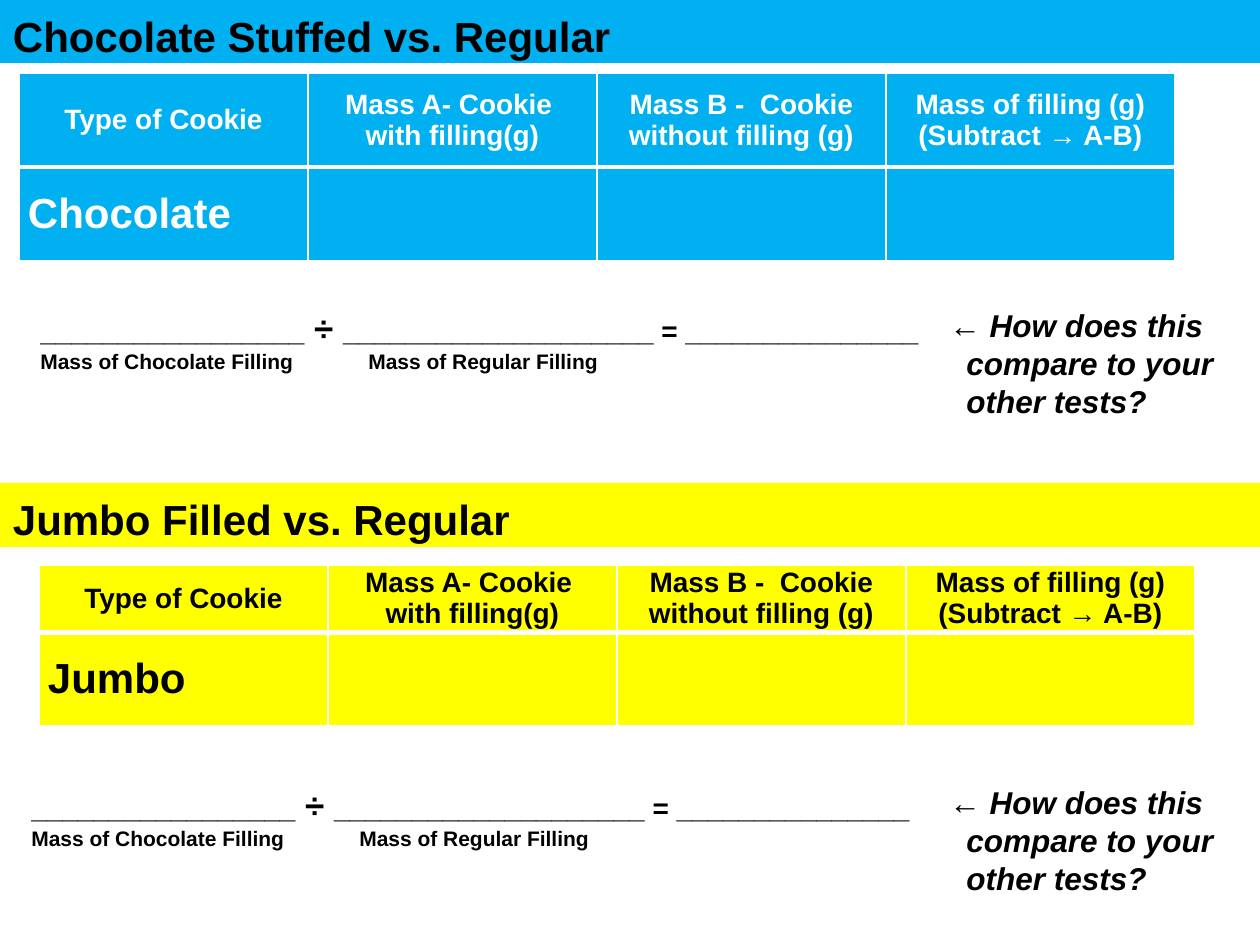
"""Build a cookie filling worksheet slide with two test sections."""
import dataclasses
import typing

import pptx
import pptx.dml.color
import pptx.enum.shapes
import pptx.enum.text
import pptx.oxml
import pptx.oxml.ns
import pptx.util

Align = pptx.enum.text.PP_ALIGN
Anchor = pptx.enum.text.MSO_ANCHOR
SCALE = 914400 / 126


@dataclasses.dataclass(frozen=True)
class Theme:
    font: str = "Arial"
    black: str = "000000"
    white: str = "FFFFFF"
    blue: str = "00B0F0"
    yellow: str = "FFFF00"
    large: int = 24
    sign: int = 20
    hint: int = 18
    body: int = 16
    label: int = 12


class Box(typing.NamedTuple):
    left: int
    top: int
    width: int
    height: int


@dataclasses.dataclass(frozen=True)
class Part:
    title: str
    kind: str
    fill: str
    ink: str
    banner: Box
    grid: Box
    rows: tuple[int, int]
    sum: Box
    hint: Box


THEME = Theme()
HEADS = ("Type of Cookie", "Mass A- Cookie \nwith filling(g)",
         "Mass B -  Cookie without filling (g)",
         "Mass of filling (g)\n(Subtract → A-B)")
PARTS = (
    Part("Chocolate Stuffed vs. Regular", "Chocolate", THEME.blue, THEME.white,
         Box(0, -1, 1260, 64), Box(19, 73, 1156, 188), (94, 94),
         Box(28, 300, 1258, 81), Box(937, 300, 323, 127)),
    Part("Jumbo Filled vs. Regular", "Jumbo", THEME.yellow, THEME.black,
         Box(0, 483, 1260, 64), Box(39, 565, 1156, 161), (67, 94),
         Box(19, 777, 1258, 81), Box(937, 777, 323, 127)),
)


def emu(px: int) -> int:
    return round(px * SCALE)


def place(box: Box) -> list[int]:
    return [emu(px) for px in box]


def color(code: str) -> pptx.dml.color.RGBColor:
    return pptx.dml.color.RGBColor.from_string(code)


def write(para, text: str, size: int, ink: str = THEME.black,
          slant: bool = False) -> None:
    for i, line in enumerate(text.split("\n")):
        if i:
            para.add_line_break()
        run = para.add_run()
        run.text = line
        font = run.font
        font.name, font.size = THEME.font, pptx.util.Pt(size)
        font.bold, font.italic = True, slant
        font.color.rgb = color(ink)


def draw_banner(shape, part: Part) -> None:
    shape.left, shape.top, shape.width, shape.height = place(part.banner)
    shape.shadow.inherit = False
    shape.fill.solid()
    shape.fill.fore_color.rgb = color(part.fill)
    shape.line.fill.background()
    frame = shape.text_frame
    frame.word_wrap = True
    frame.auto_size = pptx.enum.text.MSO_AUTO_SIZE.NONE
    frame.vertical_anchor = Anchor.TOP
    frame.margin_left = frame.margin_right = emu(13)
    frame.margin_top, frame.margin_bottom = emu(11), emu(2)
    para = frame.paragraphs[0]
    para.alignment = Align.LEFT
    write(para, part.title, THEME.large)


def edge(cell, side: str, points: int) -> None:
    space = pptx.oxml.ns.nsdecls("a")
    line = pptx.oxml.parse_xml(
        f'<a:ln{side} {space} w="{pptx.util.Pt(points)}"><a:solidFill>'
        f'<a:srgbClr val="{THEME.white}"/></a:solidFill></a:ln{side}>')
    cell._tc.get_or_add_tcPr().append(line)


def draw_grid(slide, part: Part) -> None:
    table = slide.shapes.add_table(2, len(HEADS), *place(part.grid)).table
    table.horz_banding = False
    for col in table.columns:
        col.width = emu(part.grid.width // len(HEADS))
    for y, height in enumerate(part.rows):
        table.rows[y].height = emu(height)
        for x, head in enumerate(HEADS):
            cell = table.cell(y, x)
            cell.vertical_anchor = Anchor.MIDDLE
            cell.margin_left = cell.margin_right = emu(9)
            cell.margin_top = cell.margin_bottom = 0
            for side, points in zip("LRTB", (1, 1, 3 if y else 1, 1 if y else 3)):
                edge(cell, side, points)
            cell.fill.solid()
            cell.fill.fore_color.rgb = color(part.fill)
            para = cell.text_frame.paragraphs[0]
            if y == 0:
                para.alignment = Align.CENTER
                write(para, head, THEME.body, part.ink)
            elif x == 0:
                write(para, part.kind, THEME.large, part.ink)


def add_frame(slide, box: Box):
    frame = slide.shapes.add_textbox(*place(box)).text_frame
    frame.word_wrap = True
    return frame


def draw_sum(slide, box: Box) -> None:
    frame = add_frame(slide, box)
    para = frame.paragraphs[0]
    write(para, "_" * 17, THEME.body)
    write(para, " ÷ ", THEME.sign)
    write(para, "_" * 20 + " = " + "_" * 15, THEME.body)
    para = frame.add_paragraph()
    para._p.get_or_add_pPr().append(pptx.oxml.parse_xml(
        f'<a:tabLst {pptx.oxml.ns.nsdecls("a")}>'
        f'<a:tab pos="{emu(328)}" algn="l"/></a:tabLst>'))
    write(para, "Mass of Chocolate Filling\tMass of Regular Filling", THEME.label)


def draw_hint(slide, box: Box) -> None:
    para = add_frame(slide, box).paragraphs[0]
    props = para._p.get_or_add_pPr()
    props.set("marL", str(emu(17)))
    props.set("indent", str(-emu(17)))
    write(para, "← How does this\ncompare to your\nother tests?",
          THEME.hint, slant=True)


def main() -> None:
    deck = pptx.Presentation()
    deck.slide_width, deck.slide_height = emu(1260), emu(945)
    slide = deck.slides.add_slide(deck.slide_layouts[5])
    for i, part in enumerate(PARTS):
        shape = slide.shapes.title if i == 0 else slide.shapes.add_shape(
            pptx.enum.shapes.MSO_SHAPE.RECTANGLE, *place(part.banner))
        draw_banner(shape, part)
        draw_grid(slide, part)
        draw_sum(slide, part.sum)
        draw_hint(slide, part.hint)
    deck.save("out.pptx")


if __name__ == "__main__":
    main()
